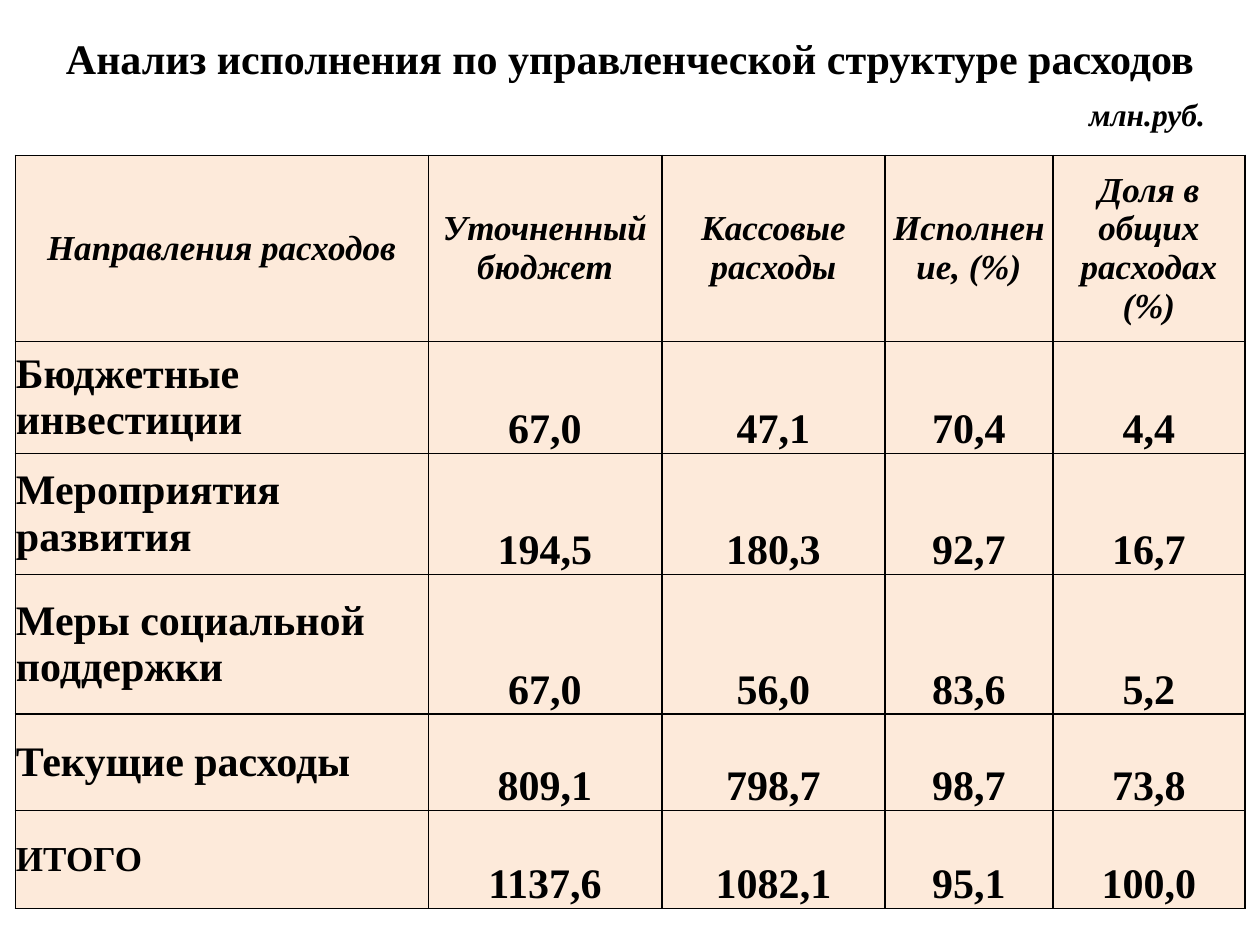
from dataclasses import dataclass

from lxml.etree import SubElement
from pptx import Presentation
from pptx.dml.color import RGBColor
from pptx.enum.text import MSO_ANCHOR, MSO_AUTO_SIZE, PP_ALIGN
from pptx.oxml.ns import qn
from pptx.util import Pt

EMU_PER_PX = 914400 / 126


@dataclass(frozen=True)
class Theme:
    """Colours, typeface, type sizes and line widths of the slide."""
    typeface: str = "Times New Roman"
    ink: str = "000000"
    cell_fill: str = "FDEADA"
    large: int = 24
    medium: int = 20
    small: int = 18
    thin: float = 0.5
    thick: float = 1


THEME = Theme()
HEADERS = ["Направления расходов", "Уточненный бюджет", "Кассовые расходы",
           "Исполнение, (%)", "Доля в общих расходах (%)"]
EXPENSES = [
    ["Бюджетные инвестиции", "67,0", "47,1", "70,4", "4,4"],
    ["Мероприятия развития", "194,5", "180,3", "92,7", "16,7"],
    ["Меры социальной поддержки", "67,0", "56,0", "83,6", "5,2"],
    ["Текущие расходы", "809,1", "798,7", "98,7", "73,8"],
    ["ИТОГО", "1137,6", "1082,1", "95,1", "100,0"],
]
COLUMN_WIDTHS = [413, 234, 223, 168, 192]
ROW_HEIGHTS = [186, 112, 121, 140, 96, 98]
THICK_VERTICALS = {2, 3, 4, 5}
THICK_HORIZONTALS = {4}


def px(length):
    """Turn pixels into EMU."""
    return round(length * EMU_PER_PX)


def apply_format(target, values):
    """Set each attribute named in values on target."""
    for name, value in values.items():
        setattr(target, name, value)


def write_text(frame, text, size, italic=False, align=PP_ALIGN.CENTER):
    """Write one bold line of text into a text frame."""
    para = frame.paragraphs[0]
    para.alignment = align
    span = para.add_run()
    span.text = text
    apply_format(span.font, {"name": THEME.typeface, "size": Pt(size),
                             "bold": True, "italic": italic})
    span.font.color.rgb = RGBColor.from_string(THEME.ink)


def add_label(page, bounds, text, size, italic=False, **frame_format):
    """Add a text box holding one centred line."""
    box = page.shapes.add_textbox(*map(px, bounds))
    apply_format(box.text_frame, frame_format)
    write_text(box.text_frame, text, size, italic)


def add_borders(cell, row, column):
    """Draw the four cell borders from the rules of the grid."""
    edges = {
        "a:lnL": column in THICK_VERTICALS,
        "a:lnR": column + 1 in THICK_VERTICALS,
        "a:lnT": row in THICK_HORIZONTALS,
        "a:lnB": row + 1 in THICK_HORIZONTALS,
    }
    properties = cell._tc.get_or_add_tcPr()
    for position, (tag, is_thick) in enumerate(edges.items()):
        width = Pt(THEME.thick if is_thick else THEME.thin)
        line = properties.makeelement(qn(tag), {"w": str(int(width))})
        fill = SubElement(line, qn("a:solidFill"))
        SubElement(fill, qn("a:srgbClr"), val=THEME.ink)
        properties.insert(position, line)


def fill_cell(cell, text, row, column):
    """Format one cell by its place in the table."""
    is_header, is_label = row == 0, column == 0
    is_total_label = is_label and row == len(EXPENSES)
    apply_format(cell, {
        "margin_left": px(1), "margin_right": px(1),
        "margin_top": px(1), "margin_bottom": 0,
        "vertical_anchor": MSO_ANCHOR.MIDDLE if is_header or is_label else MSO_ANCHOR.BOTTOM,
    })
    cell.fill.solid()
    cell.fill.fore_color.rgb = RGBColor.from_string(THEME.cell_fill)
    write_text(cell.text_frame, text,
               THEME.medium if is_header or is_total_label else THEME.large,
               is_header,
               PP_ALIGN.LEFT if is_label and not is_header else PP_ALIGN.CENTER)
    add_borders(cell, row, column)


def add_expense_table(page, left, top):
    """Add the table of planned and actual expenses."""
    rows = [HEADERS, *EXPENSES]
    bounds = (left, top, sum(COLUMN_WIDTHS), sum(ROW_HEIGHTS))
    table = page.shapes.add_table(len(rows), len(HEADERS), *map(px, bounds)).table
    apply_format(table, {"first_row": False, "horz_banding": False})
    for column, width in zip(table.columns, COLUMN_WIDTHS):
        column.width = px(width)
    for row, height in zip(table.rows, ROW_HEIGHTS):
        row.height = px(height)
    for row, texts in enumerate(rows):
        for column, text in enumerate(texts):
            fill_cell(table.cell(row, column), text, row, column)


def main():
    """Build and save the deck."""
    deck = Presentation()
    apply_format(deck, {"slide_width": px(1260), "slide_height": px(945)})
    page = deck.slides.add_slide(deck.slide_layouts[6])
    add_expense_table(page, 15, 155)
    add_label(page, (0, 26, 1260, 89),
              "Анализ исполнения по управленческой структуре расходов",
              THEME.large, word_wrap=True)
    add_label(page, (1076, 89, 142, 50), "млн.руб.", THEME.small, italic=True,
              word_wrap=False, auto_size=MSO_AUTO_SIZE.SHAPE_TO_FIT_TEXT)
    deck.save("out.pptx")


if __name__ == "__main__":
    main()
